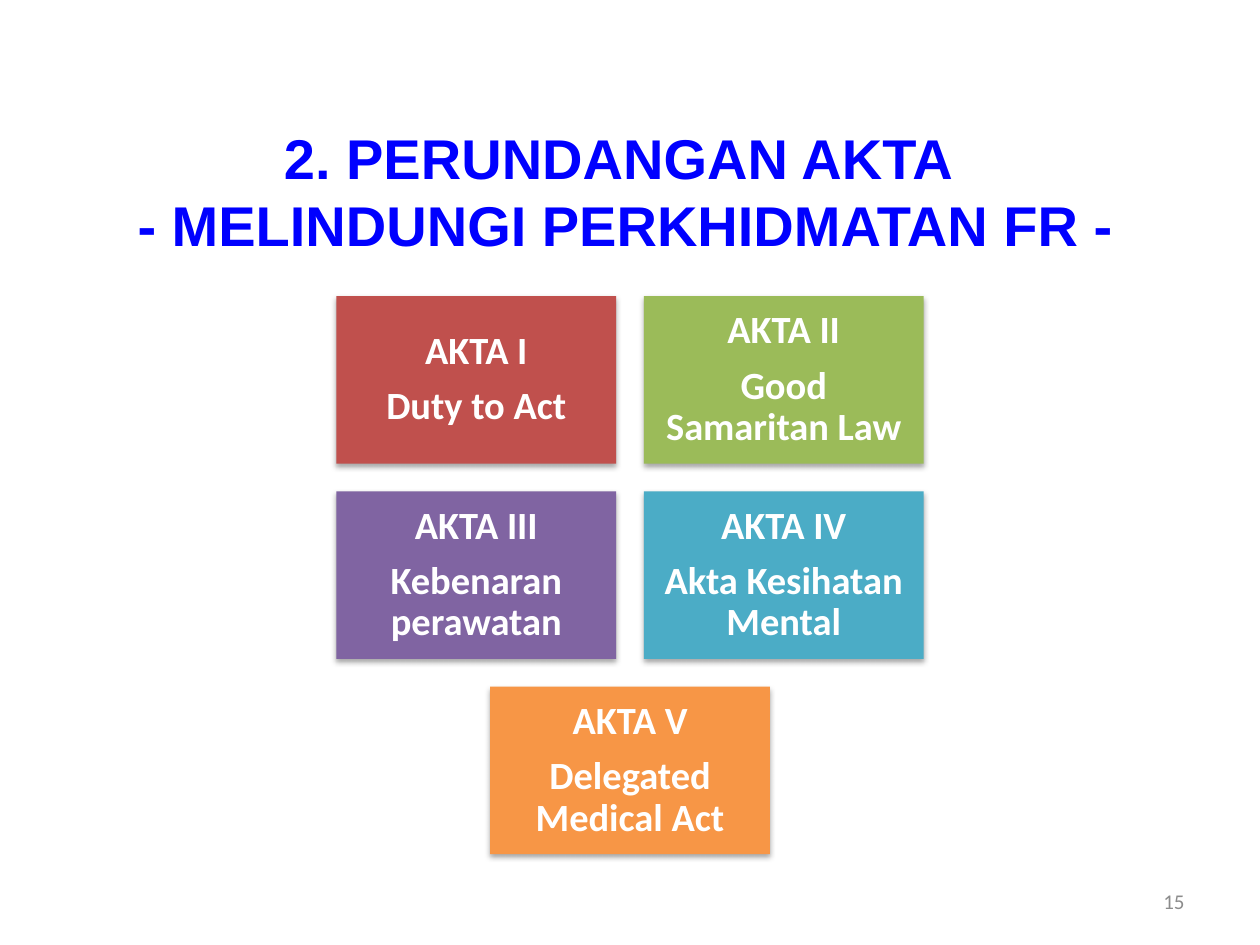
import pptx
import pptx.dml.color
import pptx.enum.shapes
import pptx.enum.text
import pptx.oxml
import pptx.oxml.ns
import pptx.util
from pptx.util import Inches

COLORS = {
    "title": "0000FF",
    "act_text": "FFFFFF",
    "page_number": "8C8C8C",
    "red": "C0504D",
    "green": "9BBB59",
    "purple": "8064A2",
    "teal": "4BACC6",
    "orange": "F79646",
}

ACTS = [
    ("AKTA I", "Duty to Act", "red"),
    ("AKTA II", "Good Samaritan Law", "green"),
    ("AKTA III", "Kebenaran perawatan", "purple"),
    ("AKTA IV", "Akta Kesihatan Mental", "teal"),
    ("AKTA V", "Delegated Medical Act", "orange"),
]

# Grid of cards, in inches; each row is centred on the slide
SLIDE_WIDTH = 10
CARD_WIDTH, CARD_HEIGHT = 2.22, 1.33
GAP = 0.22
GRID_TOP = 2.35
COLUMNS = 2

SHADOW_XML = (
    '<a:outerShdw %s blurRad="40000" dist="23000" dir="5400000" rotWithShape="0">'
    '<a:srgbClr val="000000"><a:alpha val="35000"/></a:srgbClr></a:outerShdw>'
    % pptx.oxml.ns.nsdecls("a")
)


def rgb(name):
    return pptx.dml.color.RGBColor.from_string(COLORS[name])


def format_text(frame, font_name, size, color, align, bold=False):
    for paragraph in frame.paragraphs:
        paragraph.alignment = align
        for run in paragraph.runs:
            run.font.name = font_name
            run.font.size = pptx.util.Pt(size)
            run.font.bold = bold
            run.font.color.rgb = rgb(color)


def add_soft_shadow(shape):
    shape.shadow.inherit = False
    effects = shape._element.spPr.find(pptx.oxml.ns.qn("a:effectLst"))
    effects.append(pptx.oxml.parse_xml(SHADOW_XML))


def set_title(slide):
    title = slide.shapes.title
    title.left, title.top = Inches(0.16), Inches(0.93)
    title.width, title.height = Inches(9.61), Inches(1.18)
    frame = title.text_frame
    frame.text = "2. PERUNDANGAN AKTA \n- MELINDUNGI PERKHIDMATAN FR -"
    frame.vertical_anchor = pptx.enum.text.MSO_ANCHOR.TOP
    frame.auto_size = pptx.enum.text.MSO_AUTO_SIZE.SHAPE_TO_FIT_TEXT
    format_text(frame, "Arial", 32, "title", pptx.enum.text.PP_ALIGN.CENTER, bold=True)


def add_act_card(slide, left, top, heading, description, color):
    card = slide.shapes.add_shape(
        pptx.enum.shapes.MSO_SHAPE.RECTANGLE,
        Inches(left), Inches(top), Inches(CARD_WIDTH), Inches(CARD_HEIGHT))
    card.fill.solid()
    card.fill.fore_color.rgb = rgb(color)
    card.line.fill.background()
    add_soft_shadow(card)

    frame = card.text_frame
    frame.text = f"{heading}\n{description}"
    frame.word_wrap = True
    frame.vertical_anchor = pptx.enum.text.MSO_ANCHOR.MIDDLE
    frame.margin_left = frame.margin_right = Inches(0.09)
    frame.margin_top = frame.margin_bottom = Inches(0.09)
    format_text(frame, "Calibri", 22, "act_text", pptx.enum.text.PP_ALIGN.CENTER, bold=True)
    for paragraph in frame.paragraphs:
        paragraph.line_spacing = 0.9
    frame.paragraphs[0].space_after = pptx.util.Pt(7.7)


def add_act_grid(slide):
    for row, start in enumerate(range(0, len(ACTS), COLUMNS)):
        acts = ACTS[start:start + COLUMNS]
        row_width = len(acts) * (CARD_WIDTH + GAP) - GAP
        row_left = (SLIDE_WIDTH - row_width) / 2
        top = GRID_TOP + row * (CARD_HEIGHT + GAP)
        for column, act in enumerate(acts):
            add_act_card(slide, row_left + column * (CARD_WIDTH + GAP), top, *act)


def add_page_number(slide):
    page_number = slide.shapes.add_textbox(
        Inches(7.17), Inches(6.95), Inches(2.33), Inches(0.4))
    frame = page_number.text_frame
    frame.text = "15"
    frame.word_wrap = True
    frame.vertical_anchor = pptx.enum.text.MSO_ANCHOR.MIDDLE
    format_text(frame, "Calibri", 12, "page_number", pptx.enum.text.PP_ALIGN.RIGHT)


def main():
    presentation = pptx.Presentation()
    presentation.slide_width = Inches(SLIDE_WIDTH)
    presentation.slide_height = Inches(7.5)
    title_only = presentation.slide_layouts[5]
    slide = presentation.slides.add_slide(title_only)

    set_title(slide)
    add_act_grid(slide)
    add_page_number(slide)
    presentation.save("out.pptx")


if __name__ == "__main__":
    main()
